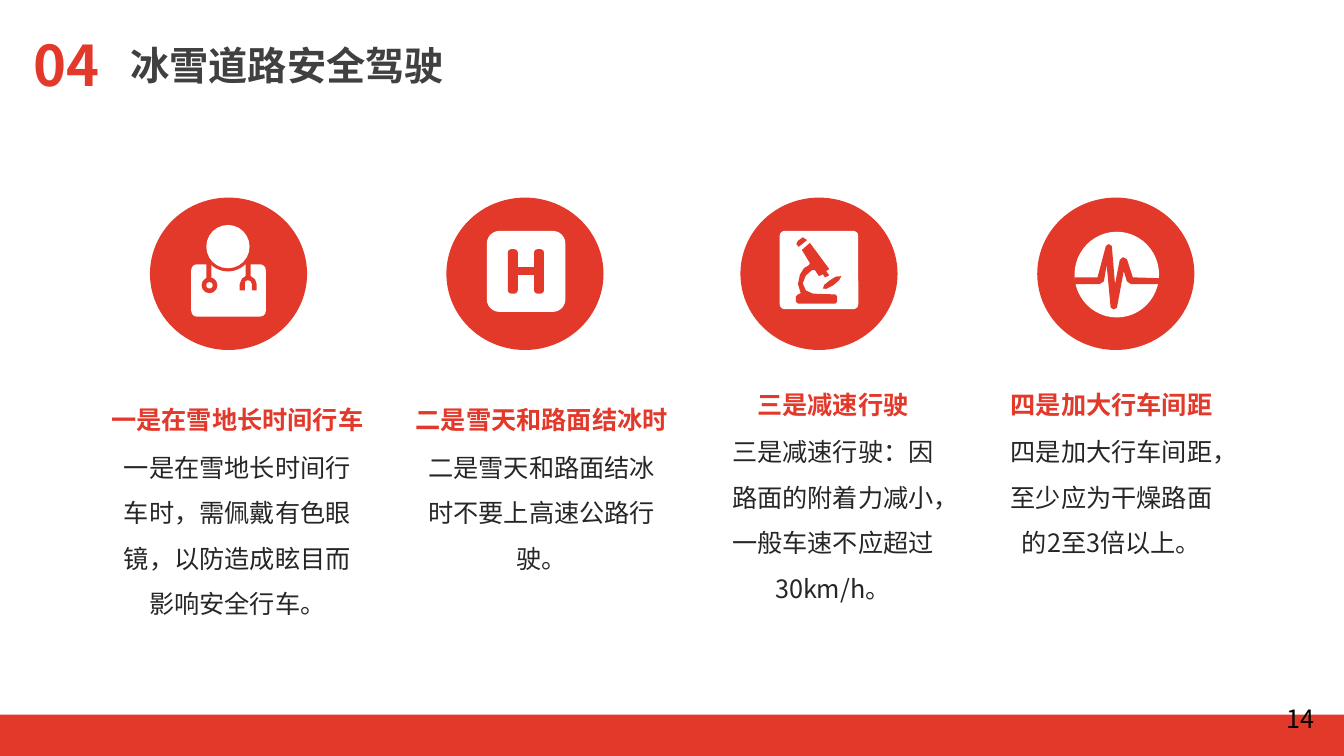
from lxml import etree
from pptx import Presentation
from pptx import util as u
from pptx.dml.color import RGBColor
from pptx.enum import shapes, text
from pptx.oxml import ns

Cm = u.Cm
HUES = {"red": "E2392B", "white": "FFFFFF", "title": "404040",
        "body": "262626", "black": "000000"}
SANS, HEAD = "Noto Sans CJK JP", "Noto Sans CJK SC"
KIND = shapes.MSO_SHAPE
LEFT, MID = text.PP_ALIGN.LEFT, text.PP_ALIGN.CENTER
DISC = (3.96, 3.84)
DISC_TOP = 4.98

# Outlines in cm, measured from the corner of the disc
ARCH = [(2.26, 2.34), (2.26, 2.18), (2.32, 2.04), (2.41, 1.98), (2.54, 1.98),
        (2.65, 2.06), (2.69, 2.18), (2.69, 2.34), (2.57, 2.34), (2.57, 2.18),
        (2.53, 2.1), (2.46, 2.08), (2.4, 2.11), (2.39, 2.18), (2.39, 2.34)]
CAP = [(1.45, 1.09), (1.57, 1), (1.68, 1.07), (1.47, 1.24), (1.41, 1.17)]
SCOPE = [(1.45, 2.44), (1.52, 2.41), (1.45, 2.18), (1.5, 1.94), (1.6, 1.78),
         (1.73, 1.7), (1.75, 1.65), (1.55, 1.32), (1.75, 1.14), (2.24, 1.8),
         (2.16, 1.85), (2.24, 1.96), (2.13, 2.01), (2.08, 1.93), (1.98, 1.98),
         (1.88, 1.83), (1.8, 1.83), (1.65, 1.96), (1.57, 2.16), (1.65, 2.34),
         (1.83, 2.42), (2.39, 2.44), (2.44, 2.49), (2.44, 2.62), (2.39, 2.67),
         (1.45, 2.67), (1.4, 2.62), (1.4, 2.49)]
LEAF = [(2.08, 2.29), (2.11, 2.2), (2.26, 2.08), (2.41, 1.99), (2.54, 1.98),
        (2.49, 2.08), (2.34, 2.21), (2.16, 2.3)]
PULSE = [(0.94, 2.01), (1.52, 2.01), (1.73, 1.22), (1.8, 1.17), (1.88, 1.22),
         (1.96, 2.18), (2.08, 1.57), (2.16, 1.5), (2.26, 1.55), (2.41, 2.01),
         (3.07, 2.03), (3.07, 2.18), (2.36, 2.18), (2.26, 2.11), (2.18, 1.85),
         (2.01, 2.77), (1.93, 2.82), (1.85, 2.77), (1.75, 1.7), (1.68, 2.11),
         (1.57, 2.18), (0.94, 2.18)]


def paint(shape, hue):
    shape.shadow.inherit = False
    shape.fill.solid()
    shape.fill.fore_color.rgb = RGBColor.from_string(HUES[hue])
    shape.line.fill.background()


def block(slide, kind, box, hue, curve=None):
    shape = slide.shapes.add_shape(kind, *map(Cm, box))
    if curve is not None:
        shape.adjustments[0] = curve
    paint(shape, hue)


def label(slide, box, words, size, hue, font=SANS, bold=False, align=LEFT,
          middle=False, flush=False, lead=None):
    frame = slide.shapes.add_textbox(*map(Cm, box)).text_frame
    frame.word_wrap = True
    if middle:
        frame.vertical_anchor = text.MSO_ANCHOR.MIDDLE
    if flush:
        frame.margin_left = frame.margin_right = 0
        frame.margin_top = frame.margin_bottom = 0
    para = frame.paragraphs[0]
    para.alignment = align
    if lead:
        para.line_spacing = lead
    run = para.add_run()
    run.text = words
    run.font.size = u.Pt(size)
    run.font.bold = bold
    run.font.name = font
    run.font.color.rgb = RGBColor.from_string(HUES[hue])
    east = etree.SubElement(run.font._element, ns.qn("a:ea"))
    east.set("typeface", font)


class Icon:
    """Draws parts of an icon relative to the corner of its disc."""

    def __init__(self, slide, x, y):
        self.slide, self.x, self.y = slide, x, y

    def put(self, kind, box, hue, curve=None):
        x, y, wide, high = box
        block(self.slide, kind, (self.x + x, self.y + y, wide, high),
              hue, curve)

    def trace(self, dots):
        dots = [(Cm(self.x + x), Cm(self.y + y)) for x, y in dots]
        pen = self.slide.shapes.build_freeform(*dots[0])
        pen.add_line_segments(dots[1:], close=True)
        paint(pen.convert_to_shape(), "red")


def doctor(icon):
    icon.put(KIND.ROUNDED_RECTANGLE, (1.04, 1.68, 1.88, 1.32), "white", 0.11)
    icon.put(KIND.OVAL, (1.34, 0.61, 1.25, 1.25), "red")
    icon.put(KIND.OVAL, (1.42, 0.69, 1.09, 1.09), "white")
    for x in (1.42, 2.41):
        icon.put(KIND.RECTANGLE, (x, 1.66, 0.13, 0.4), "red")
    icon.put(KIND.OVAL, (1.3, 2.01, 0.4, 0.4), "red")
    icon.put(KIND.OVAL, (1.42, 2.13, 0.16, 0.16), "white")
    icon.trace(ARCH)


def clinic(icon):
    icon.put(KIND.ROUNDED_RECTANGLE, (1.02, 0.84, 1.98, 2.04), "white", 0.16)
    for x in (1.55, 2.21):
        icon.put(KIND.ROUNDED_RECTANGLE, (x, 1.3, 0.25, 1.12), "red", 0.35)
    icon.put(KIND.RECTANGLE, (1.75, 1.75, 0.5, 0.2), "red")


def lab(icon):
    icon.put(KIND.ROUNDED_RECTANGLE, (0.99, 0.84, 1.98, 1.97), "white", 0.06)
    for dots in (CAP, SCOPE, LEAF):
        icon.trace(dots)


def heart(icon):
    icon.put(KIND.OVAL, (0.94, 0.86, 2.13, 2.16), "white")
    icon.trace(PULSE)


# Disc left, text box (left, top, width, height), icon, heading, advice
TIPS = [
    (3.78, (2.6, 10.19, 6.76, 5.58), doctor, "一是在雪地长时间行车",
     "一是在雪地长时间行车时，需佩戴有色眼镜，以防造成眩目而影响安全行车。"),
    (11.25, (10.27, 10.19, 6.76, 4.42), clinic, "二是雪天和路面结冰时",
     "二是雪天和路面结冰时不要上高速公路行驶。"),
    (18.66, (17.93, 9.8, 6.12, 5.58), lab, "三是减速行驶",
     "三是减速行驶：因路面的附着力减小，一般车速不应超过30km/h。"),
    (26.14, (24.95, 9.8, 6.12, 4.42), heart, "四是加大行车间距",
     "四是加大行车间距，至少应为干燥路面的2至3倍以上。"),
]


def tip(slide, x, box, draw, head, advice):
    left, top, wide, high = box
    label(slide, (left, top, wide, 0.76), head, 18, "red", bold=True,
          align=MID, middle=True, flush=True)
    label(slide, (left, top + 0.7, wide, high - 0.7), advice, 18, "body",
          align=MID, lead=1.5)
    block(slide, KIND.OVAL, (x, DISC_TOP, *DISC), "red")
    draw(Icon(slide, x, DISC_TOP))


def header(slide, x, y):
    label(slide, (x, y, 2.16, 2.03), "04", 40, "red", HEAD, True, MID, True,
          flush=True)
    label(slide, (x + 2.45, y + 0.3, 8.86, 1.45), "冰雪道路安全驾驶", 28,
          "title", HEAD, True)


def footer(slide, y, wide, high):
    block(slide, KIND.RECTANGLE, (0, y, wide, high), "red")
    label(slide, (wide - 1.7, y - 0.4, 1.7, 1.02), "14", 18, "black")


def main():
    deck = Presentation()
    deck.slide_width, deck.slide_height = Cm(33.87), Cm(19.05)
    slide = deck.slides.add_slide(deck.slide_layouts[6])
    footer(slide, 18.01, 33.87, 1.04)
    for row in TIPS:
        tip(slide, *row)
    header(slide, 0.59, 0.61)
    deck.save("out.pptx")


if __name__ == "__main__":
    main()
